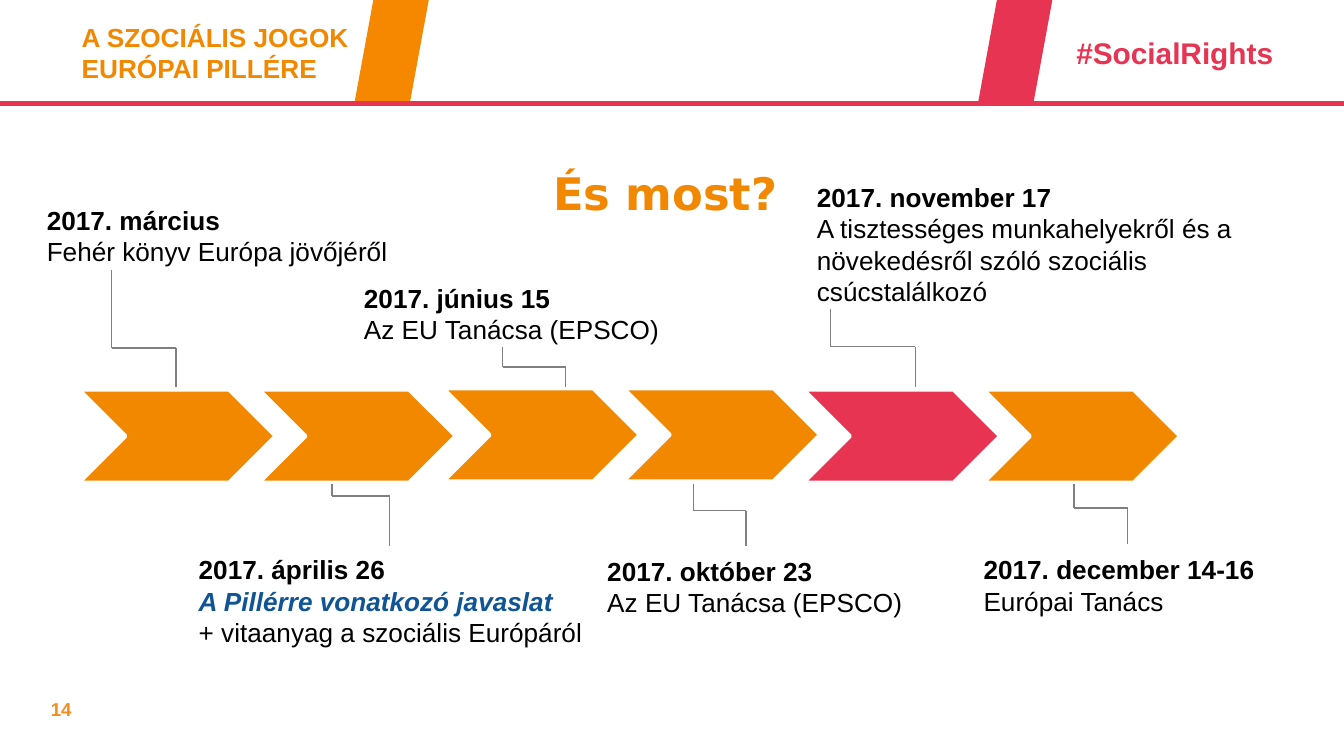
from itertools import pairwise

from lxml import etree
from pptx import Presentation
from pptx import util as u
from pptx.dml.color import RGBColor
from pptx.enum import shapes, text
from pptx.oxml.ns import qn

SLIDE_WIDTH = 10
SLIDE_HEIGHT = SLIDE_WIDTH * 9 / 16

ORANGE, PINK, BLUE, GREY = "F18800", "E73452", "0F5494", "808080"
BLACK, WHITE = "000000", "FFFFFF"

# text, (left, top, width, height), size, colour
HEADER_TEXTS = [
    ("A SZOCIÁLIS JOGOK EURÓPAI PILLÉRE", (0.51, 0.11, 2.54, 0.57), 14, ORANGE),
    ("#SocialRights", (7.91, 0.21, 2.09, 0.37), 16, PINK),
    ("14", (0.28, 5.14, 2.18, 0.27), 10, "F68B20"),
]
HEADER_BANDS = [(2.64, "F68800"), (7.28, PINK)]

# Chevrons stand in pairs: left, top, colours
CHEVRON_PAIRS = [
    (0.59, 2.9, (ORANGE, ORANGE)),
    (3.3, 2.89, (ORANGE, ORANGE)),
    (5.98, 2.9, (PINK, ORANGE)),
]
CHEVRON_WIDTH, CHEVRON_HEIGHT, CHEVRON_PITCH = 1.46, 0.69, 1.34

# Leader: start x, end x, then the heights of its start, bend and end
MILESTONES = [
    {"date": "2017. március", "lines": ["Fehér könyv Európa jövőjéről"],
     "box": (0.25, 1.47, 3.33, 0.57), "leader": (0.83, 1.31, 2.01, 2.59, 2.88)},
    {"date": "2017. április 26",
     "lines": ["A Pillérre vonatkozó javaslat", "+ vitaanyag a szociális Európáról"],
     "box": (1.38, 4.07, 3.11, 1.04), "leader": (2.47, 2.9, 3.6, 3.69, 4.06)},
    {"date": "2017. június 15", "lines": ["Az EU Tanácsa (EPSCO)"],
     "box": (2.61, 2.05, 2.6, 0.57), "leader": (3.74, 4.21, 2.58, 2.73, 2.88)},
    {"date": "2017. október 23", "lines": ["Az EU Tanácsa (EPSCO)"],
     "box": (4.42, 4.08, 2.6, 0.57), "leader": (5.16, 5.55, 3.6, 3.8, 4.06)},
    {"date": "2017. november 17",
     "lines": ["A tisztességes munkahelyekről és a növekedésről szóló szociális csúcstalálkozó"],
     "box": (5.98, 1.3, 3.69, 0.57), "leader": (6.18, 6.81, 2.3, 2.58, 2.88)},
    {"date": "2017. december 14-16", "lines": ["Európai Tanács"],
     "box": (7.22, 4.07, 2.6, 0.57), "leader": (7.99, 8.39, 3.6, 3.78, 4.05)},
]
HIGHLIGHT = "A Pillérre vonatkozó javaslat"


def rgb(colour):
    return RGBColor.from_string(colour)


def inches(lengths):
    return [u.Inches(length) for length in lengths]


def style(para, size, colour, bold=False, italic=False, name="Arial"):
    font = para.font
    font.name, font.size, font.bold, font.italic = name, u.Pt(size), bold, italic
    font.color.rgb = rgb(colour)


def add_text(page, place, lines):
    """Add a box of paragraphs, each given as (wording, style arguments)."""
    frame = page.shapes.add_textbox(*inches(place)).text_frame
    frame.word_wrap = True
    for index, (wording, look) in enumerate(lines):
        para = frame.add_paragraph() if index else frame.paragraphs[0]
        para.text = wording
        style(para, **look)


def add_line(page, start, end, colour, width):
    line = page.shapes.add_connector(
        shapes.MSO_CONNECTOR.STRAIGHT, *inches(start + end))
    line.line.color.rgb = rgb(colour)
    line.line.width = u.Pt(width)
    etree.SubElement(line._element.spPr, qn("a:effectLst"))


def add_shape(page, kind, place, colour):
    shape = page.shapes.add_shape(kind, *inches(place))
    shape.shadow.inherit = False
    shape.fill.solid()
    shape.fill.fore_color.rgb = rgb(colour)
    shape.line.fill.background()
    return shape


def add_header(page):
    for wording, place, size, colour in HEADER_TEXTS:
        add_text(page, place, [(wording, {"size": size, "colour": colour, "bold": True})])
    add_line(page, (0, 0.77), (SLIDE_WIDTH, 0.77), PINK, 2.25)
    for left, colour in HEADER_BANDS:
        add_shape(page, shapes.MSO_SHAPE.PARALLELOGRAM, (left, 0, 0.55, 0.75), colour)


def add_title(page):
    title = page.shapes.title
    title.left, title.top, title.width, title.height = inches((0.45, 1.08, 9, 0.71))
    title.text_frame.vertical_anchor = text.MSO_ANCHOR.MIDDLE
    para = title.text_frame.paragraphs[0]
    para.text = "És most?"
    para.alignment = text.PP_ALIGN.CENTER
    style(para, 24, ORANGE, bold=True, name="DejaVu Sans")


def add_chevrons(page):
    for left, top, colours in CHEVRON_PAIRS:
        for column, colour in enumerate(colours):
            place = (left + column * CHEVRON_PITCH, top, CHEVRON_WIDTH, CHEVRON_HEIGHT)
            chevron = add_shape(page, shapes.MSO_SHAPE.CHEVRON, place, colour)
            chevron.line.color.rgb = rgb(WHITE)
            chevron.line.width = u.Pt(2)


def add_milestone(page, milestone):
    lines = [(milestone["date"], {"size": 14, "colour": BLACK, "bold": True})]
    for wording in milestone["lines"]:
        marked = wording == HIGHLIGHT
        lines.append((wording, {"size": 14, "colour": BLUE if marked else BLACK,
                                "bold": marked, "italic": marked}))
    add_text(page, milestone["box"], lines)

    start_x, end_x, top, bend, bottom = milestone["leader"]
    corners = [(start_x, top), (start_x, bend), (end_x, bend), (end_x, bottom)]
    for start, end in pairwise(corners):
        add_line(page, start, end, GREY, 0.75)


def main():
    deck = Presentation()
    deck.slide_width, deck.slide_height = inches((SLIDE_WIDTH, SLIDE_HEIGHT))
    page = deck.slides.add_slide(deck.slide_layouts[5])
    add_header(page)
    add_title(page)
    add_chevrons(page)
    for milestone in MILESTONES:
        add_milestone(page, milestone)
    deck.save("out.pptx")


if __name__ == "__main__":
    main()
